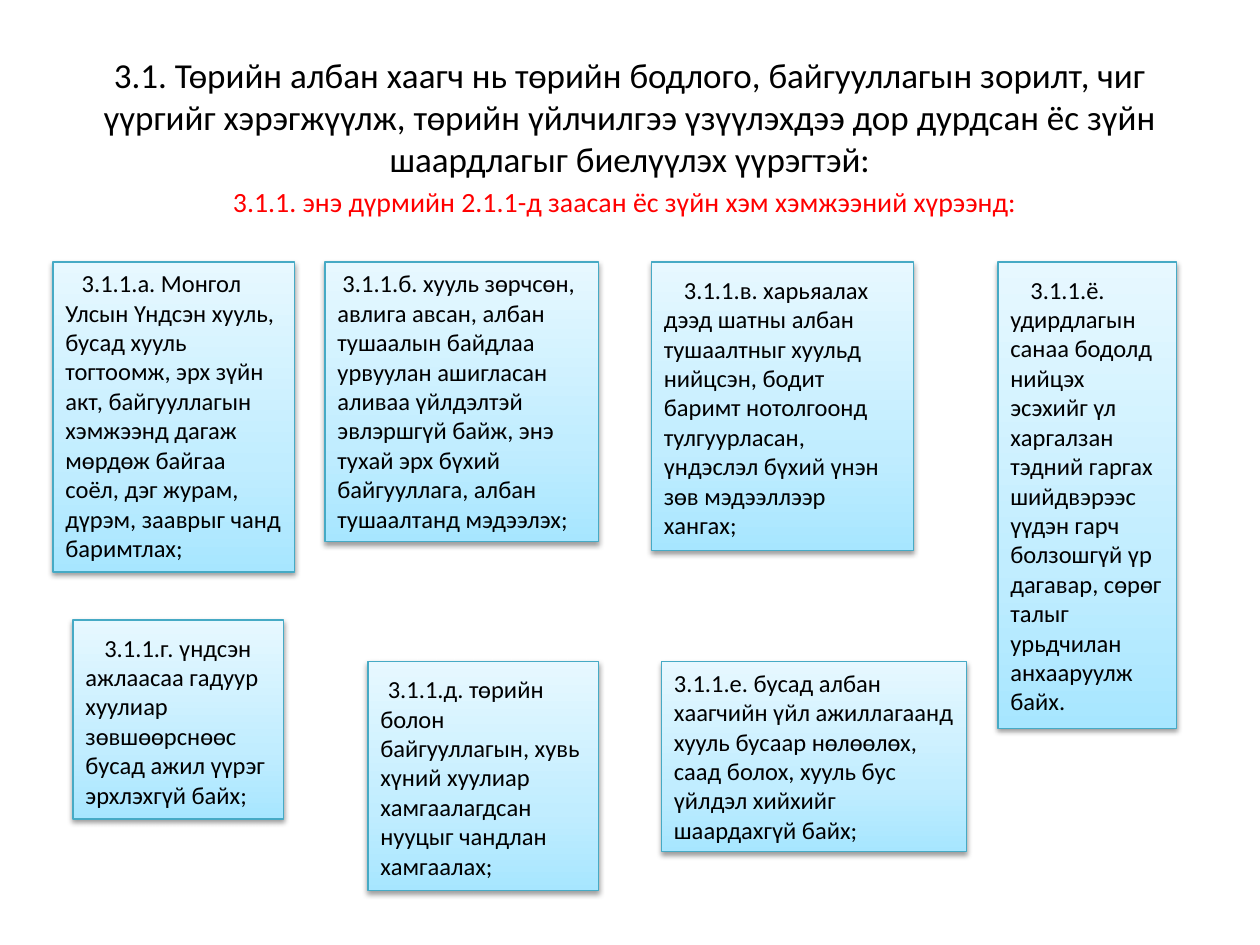
from copy import deepcopy
from dataclasses import dataclass
from typing import Any

from lxml.etree import SubElement
from pptx import Presentation
from pptx.dml.color import RGBColor
from pptx.enum.shapes import MSO_SHAPE as Shape
from pptx.enum.text import MSO_ANCHOR as Anchor, PP_ALIGN as Align
from pptx.oxml.ns import qn
from pptx.util import Inches, Pt


def rgb(value):
    return RGBColor.from_string(value)


@dataclass
class RuleSlide:
    slide: Any
    font: str = "Calibri"
    ink: str = "000000"
    accent: str = "FF0000"
    border: str = "46AAC5"
    gradient: tuple = ((0, "A7E6FF"), (0.35, "C1EDFF"), (1, "E7F8FF"))

    def set_text(self, frame, text, size, color, align):
        frame.word_wrap = True
        frame.text = text
        paragraph = frame.paragraphs[0]
        paragraph.alignment = align
        for run in paragraph.runs:
            run.font.name = self.font
            run.font.size = Pt(size)
            run.font.color.rgb = rgb(color)
        return paragraph

    def heading(self, text, left, top, width, height, size, color, anchor):
        box = self.slide.shapes.add_textbox(
            Inches(left), Inches(top), Inches(width), Inches(height))
        box.text_frame.vertical_anchor = anchor
        self.set_text(box.text_frame, text, size, color, Align.CENTER)

    def card(self, text, left, top, width, height, indent, lowered):
        """A rule in a shaded box; lowered adds room above the text."""
        card = self.slide.shapes.add_shape(
            Shape.RECTANGLE, Inches(left), Inches(top), Inches(width), Inches(height))
        card.line.color.rgb = rgb(self.border)
        card.line.width = Pt(0.75)
        self.shade(card)
        self.cast_shadow(card)
        frame = card.text_frame
        frame.vertical_anchor = Anchor.TOP
        frame.margin_top = Inches(0.1 if lowered else 0.05)
        paragraph = self.set_text(frame, text, 14, self.ink, Align.LEFT)
        paragraph._p.get_or_add_pPr().set("indent", str(Inches(indent)))

    def shade(self, card):
        card.fill.gradient()
        card.fill.gradient_angle = 90
        stop_list = card._element.spPr.find(qn("a:gradFill")).find(qn("a:gsLst"))
        stop_list.append(deepcopy(stop_list[-1]))
        for stop, (position, color) in zip(card.fill.gradient_stops, self.gradient):
            stop.position = position
            stop.color.rgb = rgb(color)

    def cast_shadow(self, card):
        card.shadow.inherit = False
        effects = card._element.spPr.find(qn("a:effectLst"))
        shadow = SubElement(effects, qn("a:outerShdw"), blurRad=str(Pt(3.1)),
                            dist=str(Pt(1.6)), dir="5400000", rotWithShape="0")
        tint = SubElement(shadow, qn("a:srgbClr"), val="000000")
        SubElement(tint, qn("a:alpha"), val="38000")


# Text, left, top, width, height, first-line indent, lowered text
UPPER, LOWER = 2.08, 5.25
RULES = [
    ("3.1.1.а. Монгол Улсын Үндсэн хууль, бусад хууль тогтоомж, эрх зүйн акт, "
     "байгууллагын хэмжээнд дагаж мөрдөж байгаа соёл, дэг журам, дүрэм, "
     "зааврыг чанд баримтлах;", 0.42, UPPER, 1.92, 2.46, 0.13, False),
    ("3.1.1.б. хууль зөрчсөн, авлига авсан, албан тушаалын байдлаа урвуулан "
     "ашигласан аливаа үйлдэлтэй эвлэршгүй байж, энэ тухай эрх бүхий "
     "байгууллага, албан тушаалтанд мэдээлэх;", 2.58, UPPER, 2.17, 2.22, 0.04, False),
    ("3.1.1.в. харьяалах дээд шатны албан тушаалтныг хуульд нийцсэн, бодит "
     "баримт нотолгоонд тулгуурласан, үндэслэл бүхий үнэн зөв мэдээллээр "
     "хангах;", 5.17, UPPER, 2.08, 2.29, 0.16, True),
    ("3.1.1.г. үндсэн ажлаасаа гадуур хуулиар зөвшөөрснөөс бусад ажил үүрэг "
     "эрхлэхгүй байх;", 0.58, 4.92, 1.67, 1.58, 0.15, True),
    ("3.1.1.д. төрийн болон байгууллагын, хувь хүний хуулиар хамгаалагдсан "
     "нууцыг чандлан хамгаалах;", 2.92, LOWER, 1.83, 1.82, 0.06, True),
    ("3.1.1.е. бусад албан хаагчийн үйл ажиллагаанд хууль бусаар нөлөөлөх, "
     "саад болох, хууль бус үйлдэл хийхийг шаардахгүй байх;",
     5.25, LOWER, 2.42, 1.51, 0, False),
    ("3.1.1.ё. удирдлагын санаа бодолд нийцэх эсэхийг үл харгалзан тэдний "
     "гаргах шийдвэрээс үүдэн гарч болзошгүй үр дагавар, сөрөг талыг "
     "урьдчилан анхааруулж байх.", 7.92, UPPER, 1.42, 3.7, 0.16, True),
]


def main():
    deck = Presentation()
    deck.slide_width, deck.slide_height = Inches(10), Inches(7.5)
    page = RuleSlide(deck.slides.add_slide(deck.slide_layouts[6]))

    # Title and subtitle
    page.heading("3.1. Төрийн албан хаагч нь төрийн бодлого, байгууллагын зорилт, "
                 "чиг үүргийг хэрэгжүүлж, төрийн үйлчилгээ үзүүлэхдээ дор дурдсан "
                 "ёс зүйн шаардлагыг биелүүлэх үүрэгтэй:",
                 0.5, 0.3, 9, 1.25, 20, page.ink, Anchor.MIDDLE)
    page.heading("3.1.1. энэ дүрмийн 2.1.1-д заасан ёс зүйн хэм хэмжээний хүрээнд:",
                 0.42, 1.42, 9.08, 0.5, 15.9, page.accent, Anchor.TOP)

    # Rule cards
    for rule in RULES:
        page.card(*rule)

    deck.save("out.pptx")


if __name__ == "__main__":
    main()
